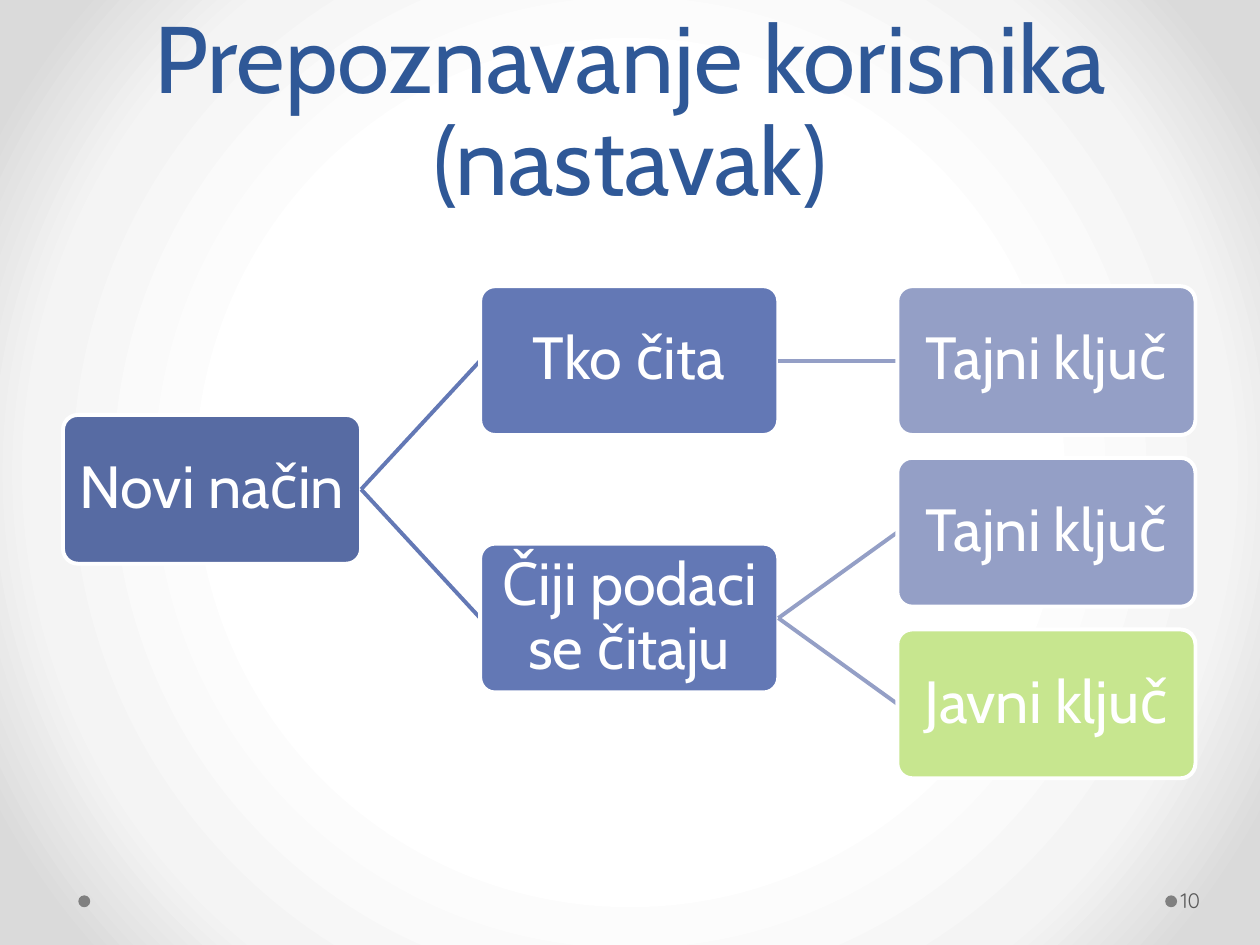
from lxml.etree import SubElement
from pptx import Presentation
from pptx.dml.color import RGBColor
from pptx.enum.shapes import MSO_CONNECTOR, MSO_SHAPE
from pptx.enum.text import MSO_ANCHOR, MSO_AUTO_SIZE, PP_ALIGN
from pptx.oxml import parse_xml
from pptx.oxml.ns import nsdecls, qn
from pptx.util import Cm, Pt

COLORS = {
    "title": "2F5897", "root": "576BA3", "branch": "6378B5", "leaf": "949FC6",
    "public": "C7E68F", "white": "FFFFFF", "dot": "808080", "number": "595959",
}
GLOW = [(50, "FFFFFF"), (76, "F4F4F4"), (92, "DADADA")]
WIDTH, HEIGHT = 6.01, 3.0
LEFT, TOP = 1.27, 5.77
COL, ROW = 8.41, 3.46

NODES = [
    ("Novi način", 0, 0.75, "root", None),
    ("Tko čita", 1, 0, "branch", 0),
    ("Tajni ključ", 2, 0, "leaf", 1),
    ("Čiji podaci se čitaju", 1, 1.5, "branch", 0),
    ("Tajni ključ", 2, 1, "leaf", 3),
    ("Javni ključ", 2, 2, "public", 3),
]


class Deck:
    font = "Cabin"
    stroke = Pt(2.25)

    def __init__(self, show):
        self.slide = show.slides.add_slide(show.slide_layouts[5])

    def color(self, name):
        return RGBColor.from_string(COLORS[name])

    def label(self, frame, text, size, color, font=None, inset=0.05,
              align=PP_ALIGN.CENTER, anchor=MSO_ANCHOR.MIDDLE, space=0.9):
        frame.text = text
        pad = Cm(inset)
        form = {
            "word_wrap": True, "auto_size": MSO_AUTO_SIZE.NONE,
            "vertical_anchor": anchor, "margin_left": pad,
            "margin_right": pad, "margin_top": pad, "margin_bottom": pad,
        }
        for key, value in form.items():
            setattr(frame, key, value)
        para = frame.paragraphs[0]
        para.alignment = align
        para.line_spacing = space
        run = para.runs[0]
        for key, value in {"size": Pt(size), "name": font or self.font}.items():
            setattr(run.font, key, value)
        run.font.color.rgb = self.color(color)

    def glow(self):
        self.slide.background.fill.gradient()
        old = self.slide.element.find(".//" + qn("a:gradFill"))
        stops = "".join(
            f'<a:gs pos="{pos * 1000}"><a:srgbClr val="{tint}"/></a:gs>'
            for pos, tint in GLOW)
        new = parse_xml(
            f'<a:gradFill {nsdecls("a")} rotWithShape="1"><a:gsLst>{stops}</a:gsLst>'
            '<a:path path="circle"><a:fillToRect l="50000" t="50000" '
            'r="50000" b="50000"/></a:path></a:gradFill>')
        old.getparent().replace(old, new)

    def title(self, text):
        shape = self.slide.shapes.title
        place = {"left": 1.27, "top": 0, "width": 22.86, "height": 4.45}
        for key, value in place.items():
            setattr(shape, key, Cm(value))
        self.label(shape.text_frame, text, 54, "title", inset=0.13,
                   anchor=MSO_ANCHOR.BOTTOM, space=Pt(58))

    def shape(self, kind, left, top, width, height, fill):
        shape = self.slide.shapes.add_shape(
            kind, Cm(left), Cm(top), Cm(width), Cm(height))
        shape.shadow.inherit = False
        shape.fill.solid()
        shape.fill.fore_color.rgb = self.color(fill)
        return shape

    def dot(self, left):
        shape = self.shape(MSO_SHAPE.OVAL, left, 18.05, 0.24, 0.24, "dot")
        shape.line.fill.background()

    def number(self, text):
        box = self.slide.shapes.add_textbox(
            Cm(23.72), Cm(17.65), Cm(1.55), Cm(1.01))
        self.label(box.text_frame, text, 12, "number", font="Quicksand",
                   inset=0.08, align=PP_ALIGN.LEFT, space=1.0)

    def box(self, text, left, top, fill):
        shape = self.shape(MSO_SHAPE.ROUNDED_RECTANGLE,
                           left, top, WIDTH, HEIGHT, fill)
        shape.adjustments[0] = 0.1
        shape.line.color.rgb = self.color("white")
        shape.line.width = self.stroke
        self.label(shape.text_frame, text, 34, "white")

    def link(self, start, end, color):
        line = self.slide.shapes.add_connector(
            MSO_CONNECTOR.STRAIGHT, *(Cm(value) for value in start + end))
        line.line.color.rgb = self.color(color)
        line.line.width = self.stroke
        SubElement(line.element.spPr, qn("a:effectLst"))


def spot(node):
    return LEFT + node[1] * COL, TOP + node[2] * ROW


def main():
    show = Presentation()
    show.slide_width, show.slide_height = Cm(25.4), Cm(19.05)
    deck = Deck(show)
    deck.glow()
    for left in (23.49, 1.58):
        deck.dot(left)
    deck.title("Prepoznavanje korisnika (nastavak)")
    deck.number("10")
    for node in NODES:
        text, level, row, fill, parent = node
        left, top = spot(node)
        if parent is not None:
            from_left, from_top = spot(NODES[parent])
            deck.link((from_left + WIDTH, from_top + HEIGHT / 2),
                      (left, top + HEIGHT / 2),
                      "branch" if level == 1 else "leaf")
        deck.box(text, left, top, fill)
    show.save("out.pptx")


if __name__ == "__main__":
    main()
